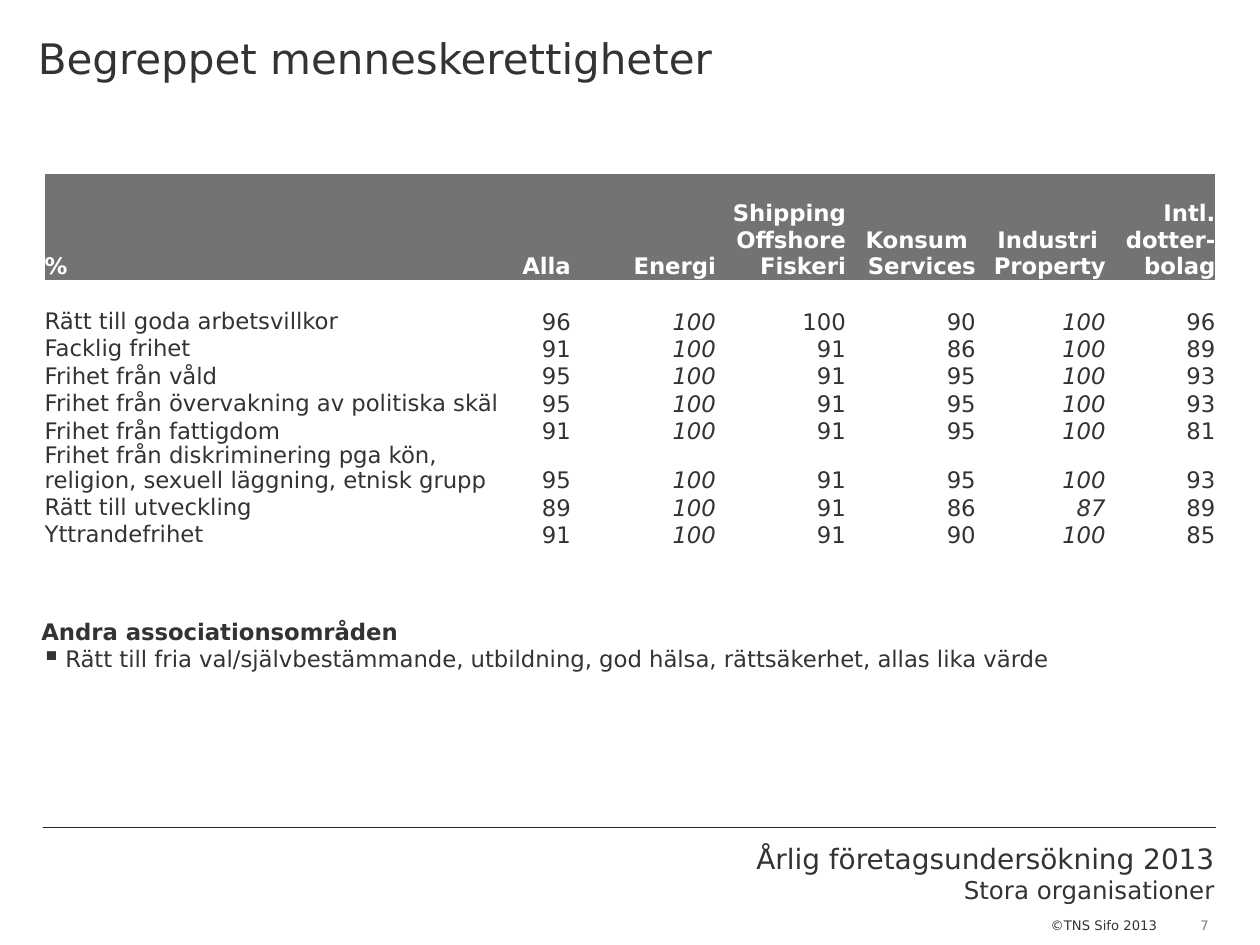
from lxml.etree import SubElement as Sub
from pptx import Presentation
from pptx.dml.color import RGBColor as Rgb
from pptx.enum.shapes import MSO_CONNECTOR as Link
from pptx.enum.text import MSO_ANCHOR as Anchor, PP_ALIGN as Align
from pptx.oxml.ns import qn
from pptx.util import Inches, Pt

COLS, ROWS = 100, 75
WIDE, HIGH = Inches(10), Inches(7.5)
FONT = "DejaVu Sans"
HUES = {"ink": "333333", "rule": "262626", "head": "737373",
        "page": "808080", "white": "FFFFFF"}
PLAIN = "{2D5ABB26-0587-4C30-8999-92F81FD0307C}"

HEADS = ["%", "Alla", "Energi", "Shipping\nOffshore\nFiskeri",
         "Konsum \nServices", "Industri \nProperty", "Intl.\ndotter-\nbolag"]
DATA = [
    ("Rätt till goda arbetsvillkor", 96, 100, 100, 90, 100, 96),
    ("Facklig frihet", 91, 100, 91, 86, 100, 89),
    ("Frihet från våld", 95, 100, 91, 95, 100, 93),
    ("Frihet från övervakning av politiska skäl", 95, 100, 91, 95, 100, 93),
    ("Frihet från fattigdom", 91, 100, 91, 95, 100, 81),
    ("Frihet från diskriminering pga kön, religion, sexuell läggning, etnisk grupp",
     95, 100, 91, 95, 100, 93),
    ("Rätt till utveckling", 89, 100, 91, 86, 87, 89),
    ("Yttrandefrihet", 91, 100, 91, 90, 100, 85),
]
SLANT = (2, 5)
TIGHT = (3, 5)
SPANS = [3.7, 0.47, 1.15, 1.03, 1.03, 1.03, 0.87]


def across(n):
    return round(WIDE * n / COLS)


def down(n):
    return round(HIGH * n / ROWS)


def place(box):
    x, y, w, h = box
    return across(x), down(y), across(w), down(h)


def pad(frame, left=0, top=0, right=0, base=0):
    frame.margin_left, frame.margin_right = across(left), across(right)
    frame.margin_top, frame.margin_bottom = down(top), down(base)


def style(para, size, hue="ink", bold=False, slant=False, align=Align.LEFT):
    para.alignment = align
    for run in para.runs:
        font = run.font
        font.name, font.size = FONT, Pt(size)
        font.bold, font.italic = bold, slant
        font.color.rgb = Rgb.from_string(HUES[hue])


def add_text(slide, box, text, sizes, hue="ink", align=Align.LEFT, wrap=True):
    frame = slide.shapes.add_textbox(*place(box)).text_frame
    frame.word_wrap = wrap
    frame.text = text
    for para, size in zip(frame.paragraphs, sizes):
        style(para, size, hue, align=align)
    return frame


def add_title(slide, box):
    title = slide.shapes.title
    title.left, title.top, title.width, title.height = place(box)
    frame = title.text_frame
    frame.text = "Begreppet menneskerettigheter"
    frame.vertical_anchor = Anchor.TOP
    pad(frame, 3, 2.6, 3)
    style(frame.paragraphs[0], 24)


def fill_cell(cell, text, row, col):
    head = row == 0
    cell.text = str(text)
    cell.vertical_anchor = Anchor.BOTTOM
    pad(cell, top=2 if head and col == len(HEADS) - 1 else 0)
    if head:
        cell.fill.solid()
        cell.fill.fore_color.rgb = Rgb.from_string(HUES["head"])
    else:
        cell.fill.background()
    for para in cell.text_frame.paragraphs:
        style(para, 13, "white" if head else "ink", head,
              not head and col in SLANT, Align.RIGHT if col else Align.LEFT)
        if not text:
            para._p.get_or_add_endParaRPr().set("sz", "1300")
        elif not head and col:
            para.line_spacing = 0.9
        elif row - 2 in TIGHT:
            para.line_spacing = Pt(14)


def add_grid(slide, box):
    lines = [HEADS, [""] * len(HEADS), *DATA]
    shape = slide.shapes.add_table(len(lines), len(HEADS), *place(box))
    table = shape.table
    table.first_row = table.horz_banding = False
    table._tbl.tblPr.find(qn("a:tableStyleId")).text = PLAIN
    for col, span in zip(table.columns, SPANS):
        col.width = across(box[2] * span / sum(SPANS))
    top, tall = 8.4, 3.9
    step = (box[3] - top - tall) / (len(lines) - 2)
    for i, line in enumerate(lines):
        size = {0: top, 2 + TIGHT[1]: tall}.get(i, step)
        table.rows[i].height = down(size)
        for j, text in enumerate(line):
            fill_cell(table.cell(i, j), text, i, j)


def add_notes(slide, box):
    frame = add_text(slide, box, "Andra associationsområden\n"
                     "Rätt till fria val/självbestämmande, utbildning, god hälsa, "
                     "rättsäkerhet, allas lika värde", (13, 13))
    head, item = frame.paragraphs
    style(head, 13, bold=True)
    item.space_before = Pt(0.3)
    props = item._p.get_or_add_pPr()
    hang = across(1.9)
    props.set("marL", str(hang))
    props.set("indent", str(-hang))
    tint = Sub(props, qn("a:buClr"))
    Sub(tint, qn("a:srgbClr"), val=HUES["ink"])
    Sub(props, qn("a:buSzPct"), val="120000")
    Sub(props, qn("a:buChar"), char="▪")


def add_foot(slide, box):
    x, y, w, h = box
    rule = slide.shapes.add_connector(
        Link.STRAIGHT, across(x), down(y), across(x + w), down(y))
    rule.line.color.rgb = Rgb.from_string(HUES["rule"])
    rule.line.width = Pt(0.75)
    Sub(rule._element.spPr, qn("a:effectLst"))
    right = x + w
    add_text(slide, (right - 44.9, y + 0.6, 45.8, 6.1),
             "Årlig företagsundersökning 2013\nStora organisationer",
             (16, 14), align=Align.RIGHT)
    add_text(slide, (right - 14.1, y + 6.6, 11, 2.3), "©TNS Sifo 2013", (7.5,))
    page = add_text(slide, (right - 1.8, y + 7.1, 1.8, 1.3), "7", (7.5,),
                    "page", Align.CENTER, False)
    pad(page)


def main():
    deck = Presentation()
    deck.slide_width, deck.slide_height = WIDE, HIGH
    slide = deck.slides.add_slide(deck.slide_layouts[5])
    add_title(slide, (0, 0, 100, 11.6))
    add_grid(slide, (3.55, 13.8, 92.9, 29.7))
    add_notes(slide, (2.3, 48.5, 94.1, 5.4))
    add_foot(slide, (3.4, 65.7, 93.1, 9.3))
    deck.save("out.pptx")


if __name__ == "__main__":
    main()
